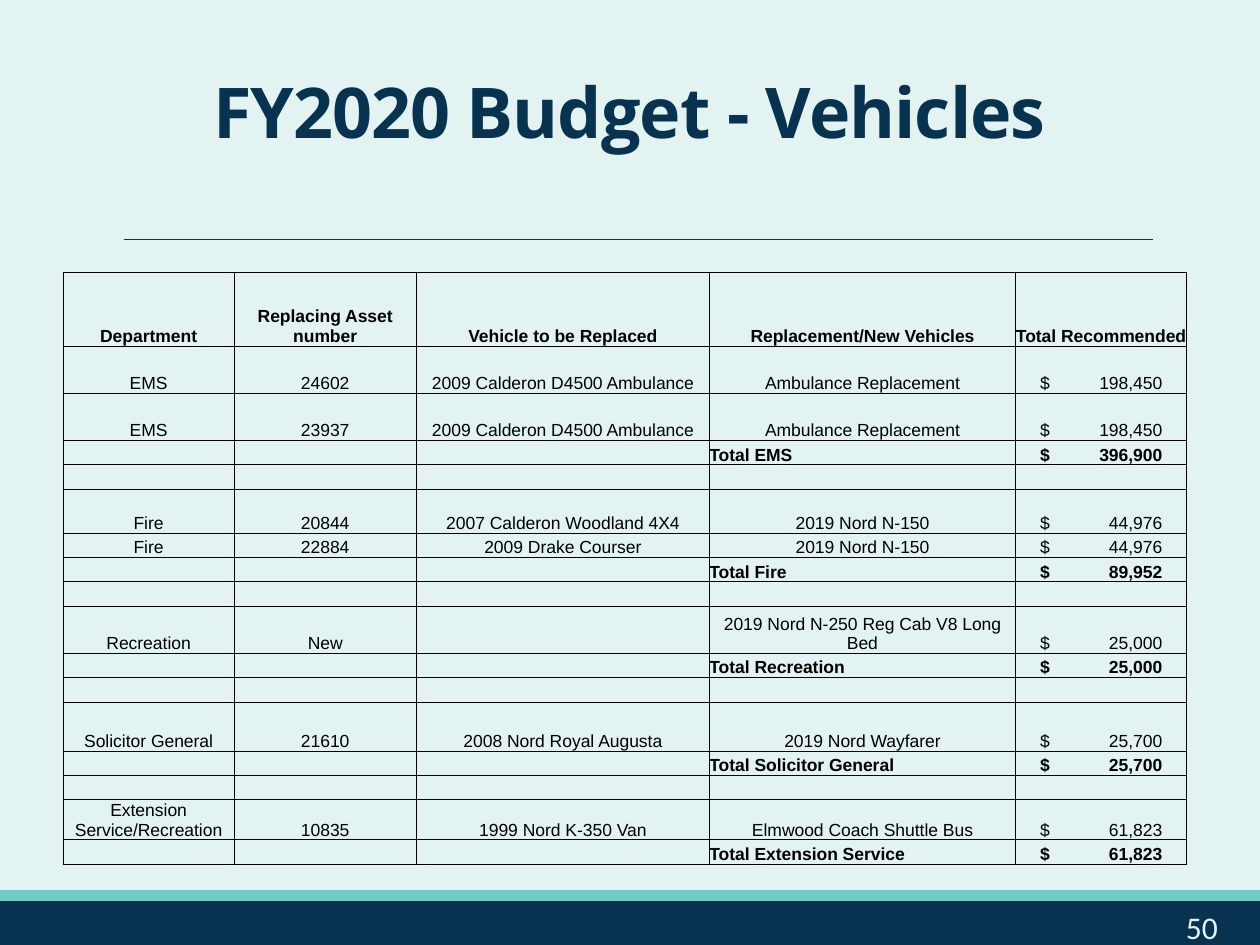
from lxml import etree
from pptx import Presentation
from pptx.dml.color import RGBColor
from pptx.enum import shapes, text
from pptx.oxml import ns
from pptx.util import Cm, Pt

NAVY = RGBColor(0x08, 0x33, 0x50)
TEAL = RGBColor(0x72, 0xCA, 0xC4)
MINT = RGBColor(0xE3, 0xF3, 0xF1)
BLACK = RGBColor(0, 0, 0)

LEFT, CENTER = text.PP_ALIGN.LEFT, text.PP_ALIGN.CENTER
WIDTHS = [3.45, 3.67, 5.91, 6.17, 3.45]
THIN = 0.49
HEADS = ["Department", "Replacing Asset number", "Vehicle to be Replaced",
         "Replacement/New Vehicles", "Total Recommended"]
# Each group: name on its total row, then (row height, four texts, amount)
GROUPS = [
    ("EMS", [
        (0.95, ["EMS", "24602", "2009 Calderon D4500 Ambulance",
                "Ambulance Replacement"], 198450),
        (0.95, ["EMS", "23937", "2009 Calderon D4500 Ambulance",
                "Ambulance Replacement"], 198450)]),
    ("Fire", [
        (0.89, ["Fire", "20844", "2007 Calderon Woodland 4X4",
                "2019 Nord N-150"], 44976),
        (THIN, ["Fire", "22884", "2009 Drake Courser",
                "2019 Nord N-150"], 44976)]),
    ("Recreation", [
        (0.95, ["Recreation", "New", "",
                "2019 Nord N-250 Reg Cab V8 Long Bed"], 25000)]),
    ("Solicitor General", [
        (0.99, ["Solicitor General", "21610", "2008 Nord Royal Augusta",
                "2019 Nord Wayfarer"], 25700)]),
    ("Extension Service", [
        (0.81, ["Extension Service/Recreation", "10835", "1999 Nord K-350 Van",
                "Elmwood Coach Shuttle Bus"], 61823)]),
]


def sub(parent, tag, **attrs):
    return etree.SubElement(parent, ns.qn(tag), attrs)


def money(value):
    return f"$\t{value:,}"


def list_rows():
    """Return (height, texts, bold) for every row of the table."""
    rows = [(0.41, [""] * 5, False), (1.49, HEADS, True)]
    for i, (name, items) in enumerate(GROUPS):
        if i:
            rows.append((THIN, [""] * 5, False))
        rows += [(high, cells + [money(cost)], False)
                 for high, cells, cost in items]
        total = sum(item[2] for item in items)
        rows.append((THIN, ["", "", "", f"Total {name}", money(total)], True))
    return rows


class Deck:
    def __init__(self):
        self.prs = Presentation()
        self.prs.slide_width, self.prs.slide_height = Cm(25.4), Cm(19.05)
        self.slide = self.prs.slides.add_slide(self.prs.slide_layouts[5])
        fill = self.slide.background.fill
        fill.solid()
        fill.fore_color.rgb = MINT

    def style(self, para, size, face, color, bold=False, align=CENTER):
        para.alignment = align
        font = para.font
        font.size, font.name, font.bold = Pt(size), face, bold
        font.color.rgb = color

    def title(self, words, x, y, w, h):
        box = self.slide.shapes.title
        box.left, box.top, box.width, box.height = map(Cm, (x, y, w, h))
        frame = box.text_frame
        frame.text = words
        frame.auto_size = text.MSO_AUTO_SIZE.NONE
        frame.vertical_anchor = text.MSO_ANCHOR.BOTTOM
        para = frame.paragraphs[0]
        para.line_spacing = 0.85
        self.style(para, 40, "Open Sans", NAVY, True)
        para.runs[0]._r.get_or_add_rPr().set("spc", "-50")

    def band(self, color, y, h):
        bar = self.slide.shapes.add_shape(
            shapes.MSO_SHAPE.RECTANGLE, 0, Cm(y), self.prs.slide_width, Cm(h))
        bar.shadow.inherit = False
        bar.fill.solid()
        bar.fill.fore_color.rgb = bar.line.color.rgb = color
        bar.line.width = Pt(1.25)

    def rule(self, x, y, w):
        line = self.slide.shapes.add_connector(
            shapes.MSO_CONNECTOR.STRAIGHT, Cm(x), Cm(y), Cm(x + w), Cm(y))
        line.line.color.rgb = NAVY
        line.line.width = Pt(0.5)
        sub(line._element.spPr, "a:effectLst")

    def label(self, words, x, y, w, h):
        box = self.slide.shapes.add_textbox(*map(Cm, (x, y, w, h)))
        frame = box.text_frame
        frame.word_wrap = True
        frame.text = words
        self.style(frame.paragraphs[0], 18, "Calibri", MINT)

    def edge(self, cell, sides):
        """Draw thin black borders on the given sides and none elsewhere."""
        props = cell._tc.get_or_add_tcPr()
        for side in "LRTB":
            line = sub(props, f"a:ln{side}", w=str(Pt(0.5)))
            if side in sides:
                paint = sub(line, "a:solidFill")
                sub(paint, "a:srgbClr", val=str(BLACK))
            else:
                sub(line, "a:noFill")

    def cell(self, cell, words, bold, sides):
        self.edge(cell, sides)
        cell.fill.background()
        cell.margin_left = cell.margin_right = 0
        cell.margin_top = cell.margin_bottom = 0
        cell.vertical_anchor = text.MSO_ANCHOR.BOTTOM
        cell.text = words
        para = cell.text_frame.paragraphs[0]
        align = CENTER
        if "\t" in words:
            align = LEFT
            cell.margin_left = Cm(0.5)
            tabs = sub(para._p.get_or_add_pPr(), "a:tabLst")
            sub(tabs, "a:tab", pos=str(Cm(2.46)), algn="r")
        elif words.startswith("Total ") and words not in HEADS:
            align = LEFT
        self.style(para, 10, "Arial", BLACK, bold, align)
        if not words:
            sub(para._p, "a:endParaRPr", sz="1000")

    def table(self, rows, x, y):
        frame = self.slide.shapes.add_table(
            len(rows), len(WIDTHS), Cm(x), Cm(y),
            Cm(sum(WIDTHS)), Cm(sum(row[0] for row in rows)))
        grid = frame.table
        grid.first_row = grid.horz_banding = False
        for col, wide in zip(grid.columns, WIDTHS):
            col.width = Cm(wide)
        for i, (high, cells, bold) in enumerate(rows):
            grid.rows[i].height = Cm(high)
            for j, words in enumerate(cells):
                self.cell(grid.cell(i, j), words, bold, "LRTB" if i else "B")


def main():
    deck = Deck()
    deck.band(NAVY, 18.16, 0.89)
    deck.band(TEAL, 17.96, 0.18)
    deck.rule(2.49, 4.83, 20.75)
    deck.title("FY2020 Budget - Vehicles", 0.84, 1.09, 23.7, 2.11)
    deck.table(list_rows(), 1.27, 5.08)
    deck.label("50", 23.06, 18.19, 2.34, 1.09)
    deck.prs.save("out.pptx")


if __name__ == "__main__":
    main()
